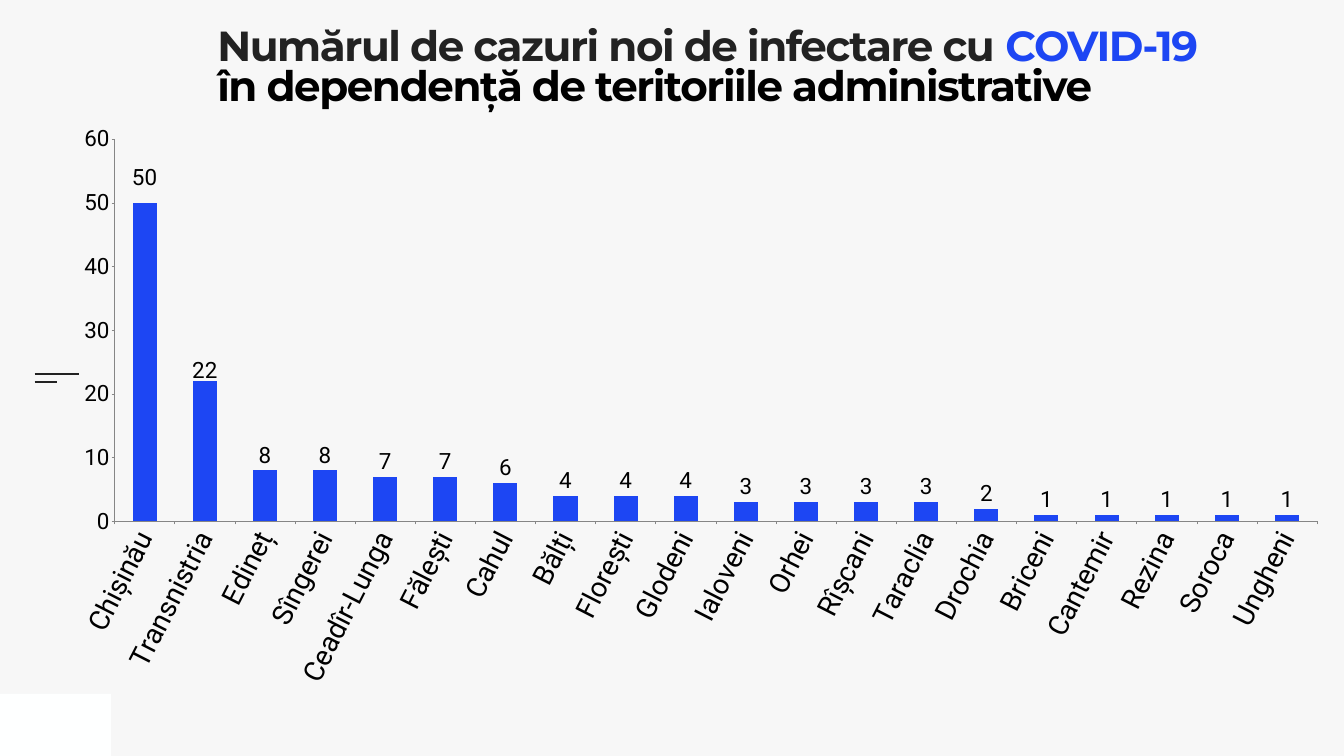
import pptx
import pptx.chart.data
import pptx.dml.color
import pptx.enum.chart
import pptx.enum.shapes
import pptx.enum.text
import pptx.oxml
import pptx.oxml.ns
import pptx.util

Cm, Pt = pptx.util.Cm, pptx.util.Pt
RGB = pptx.dml.color.RGBColor
BLUE = RGB(0x1D, 0x46, 0xF3)
DARK = RGB(0x22, 0x22, 0x22)
BLACK = RGB(0, 0, 0)
GREY = RGB(0x86, 0x86, 0x86)
PALE = RGB(0xF7, 0xF7, 0xF7)
WHITE = RGB(0xFE, 0xFF, 0xFF)

CASES = {
    "Chișinău": 50, "Transnistria": 22, "Edineț": 8, "Sîngerei": 8,
    "Ceadîr-Lunga": 7, "Fălești": 7, "Cahul": 6, "Bălți": 4,
    "Florești": 4, "Glodeni": 4, "Ialoveni": 3, "Orhei": 3,
    "Rîșcani": 3, "Taraclia": 3, "Drochia": 2, "Briceni": 1,
    "Cantemir": 1, "Rezina": 1, "Soroca": 1, "Ungheni": 1,
}
TITLE = [
    [("Numărul de cazuri noi de infectare cu ", DARK), ("COVID-19", BLUE)],
    [("în dependență de teritoriile administrative", BLACK)],
]


def layout(**vals):
    """Manual chart layout; each value names its c: element."""
    body = "".join(f'<c:{k} val="{v}"/>' for k, v in vals.items())
    ns = pptx.oxml.ns.nsdecls("c")
    return pptx.oxml.parse_xml(
        f"<c:layout {ns}><c:manualLayout>{body}</c:manualLayout></c:layout>")


class Deck:
    head, body = "Montserrat", "Roboto"

    def __init__(self, wide, high):
        self.prs = pptx.Presentation()
        self.prs.slide_width, self.prs.slide_height = Cm(wide), Cm(high)
        self.slide = self.prs.slides.add_slide(self.prs.slide_layouts[5])
        fill = self.slide.background.fill
        fill.solid()
        fill.fore_color.rgb = PALE

    def block(self, x, y, w, h, color):
        box = self.slide.shapes.add_shape(
            pptx.enum.shapes.MSO_SHAPE.RECTANGLE, Cm(x), Cm(y), Cm(w), Cm(h))
        box.shadow.inherit = False
        box.fill.solid()
        box.fill.fore_color.rgb = color
        box.line.fill.background()

    def rule(self, x, y, w):
        line = self.slide.shapes.add_connector(
            pptx.enum.shapes.MSO_CONNECTOR.STRAIGHT, Cm(x), Cm(y), Cm(x + w), Cm(y))
        line.line.color.rgb = DARK
        line.line.width = Pt(3)
        line._element.spPr.append(
            pptx.oxml.parse_xml(f'<a:effectLst {pptx.oxml.ns.nsdecls("a")}/>'))

    def title(self, x, y, w, h, rows):
        box = self.slide.shapes.title
        box.left, box.top, box.width, box.height = Cm(x), Cm(y), Cm(w), Cm(h)
        frame = box.text_frame
        frame.margin_left = frame.margin_right = 0
        frame.margin_top = frame.margin_bottom = 0
        frame.word_wrap = True
        frame.auto_size = pptx.enum.text.MSO_AUTO_SIZE.NONE
        frame.vertical_anchor = pptx.enum.text.MSO_ANCHOR.TOP
        for i, row in enumerate(rows):
            para = frame.add_paragraph() if i else frame.paragraphs[0]
            para.alignment = pptx.enum.text.PP_ALIGN.LEFT
            para.line_spacing = 0.8
            para.space_before = Pt(0)
            for text, color in row:
                run = para.add_run()
                run.text = text
                self.font(run.font, 60, color, self.head)
                run.font.bold = True
                run.font._element.set("spc", "-200")

    def font(self, font, size, color=BLACK, name=body):
        font.size, font.name = Pt(size), name
        font.color.rgb = color

    def bars(self, x, y, w, h, vals, plot, shifts):
        data = pptx.chart.data.CategoryChartData()
        data.categories = list(vals)
        data.add_series("Series 1", list(vals.values()))
        kinds = pptx.enum.chart
        chart = self.slide.shapes.add_chart(
            kinds.XL_CHART_TYPE.COLUMN_CLUSTERED,
            Cm(x), Cm(y), Cm(w), Cm(h), data).chart
        chart.has_legend = chart.has_title = False
        self.font(chart.font, 40)

        # Plot area
        area = chart._chartSpace.chart.plotArea
        for old in area.findall(pptx.oxml.ns.qn("c:layout")):
            area.remove(old)
        area.insert(0, layout(layoutTarget="inner", xMode="edge", yMode="edge", **plot))

        # Axes
        for axis, size in ((chart.category_axis, 40), (chart.value_axis, 32)):
            axis.has_major_gridlines = False
            axis.major_tick_mark = kinds.XL_TICK_MARK.OUTSIDE
            axis.format.line.color.rgb = GREY
            self.font(axis.tick_labels.font, size)
        axis.minimum_scale, axis.maximum_scale, axis.major_unit = 0, 60, 10
        turn = chart.category_axis._element.find(pptx.oxml.ns.qn("c:txPr"))
        turn.bodyPr.set("rot", str(-63 * 60000))

        # Columns and their labels
        group = chart.plots[0]
        group.gap_width = 150
        group.vary_by_categories = False
        row = group.series[0]
        row.format.fill.solid()
        row.format.fill.fore_color.rgb = BLUE
        labels = row.data_labels
        labels.show_value = True
        above = kinds.XL_LABEL_POSITION.OUTSIDE_END
        labels.position = above
        self.font(labels.font, 32)
        for i, dy in enumerate(shifts):
            label = row.points[i].data_label
            self.font(label.font, 32)
            label.position = above
            row._element.xpath(f"c:dLbls/c:dLbl[c:idx/@val={i}]")[0].insert(
                1, layout(x=0, y=dy))


def main():
    deck = Deck(67.74, 38.1)

    # Corner block and side mark
    deck.block(0, 34.97, 5.59, 3.13, WHITE)
    deck.rule(1.75, 18.84, 2.24)
    deck.rule(1.75, 19.26, 1.12)

    # Title
    deck.title(10.95, 1.47, 50.85, 6.93, TITLE)

    # New cases by territory
    deck.bars(2.9, 6.35, 63.93, 30.1, CASES,
              plot=dict(x=0.045, y=0.022, w=0.948, h=0.64),
              shifts=(-0.017, 0.008))

    deck.prs.save("out.pptx")


if __name__ == "__main__":
    main()
